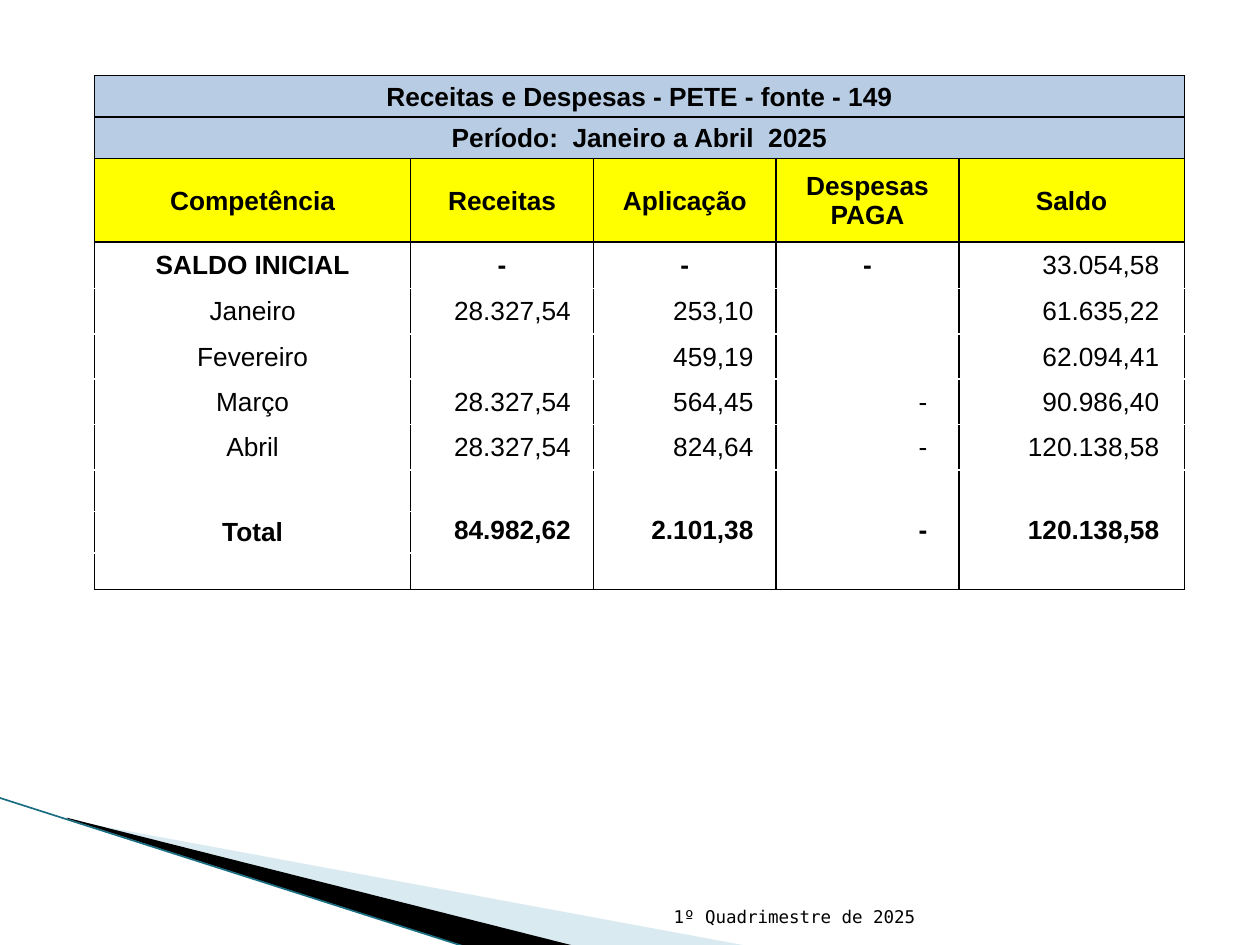
from lxml import etree
from pptx import Presentation
from pptx import util as u
from pptx.dml.color import RGBColor
from pptx.enum import shapes, text
from pptx.oxml import ns

BLACK = RGBColor(0x00, 0x00, 0x00)
WHITE = RGBColor(0xFF, 0xFF, 0xFF)
BLUE = RGBColor(0xB8, 0xCC, 0xE4)
YELLOW = RGBColor(0xFF, 0xFF, 0x00)
PALE_TEAL = RGBColor(0xA0, 0xCB, 0xDC)
TEAL = RGBColor(0x1B, 0x6E, 0x82)

CENTER, RIGHT = text.PP_ALIGN.CENTER, text.PP_ALIGN.RIGHT

ROWS = [
    ["Receitas e Despesas - PETE - fonte - 149", "", "", "", ""],
    ["Período:  Janeiro a Abril  2025", "", "", "", ""],
    ["Competência", "Receitas", "Aplicação", "Despesas PAGA", "Saldo"],
    ["SALDO INICIAL", "-", "-", "-", "33.054,58"],
    ["Janeiro", "28.327,54", "253,10", "", "61.635,22"],
    ["Fevereiro", "", "459,19", "", "62.094,41"],
    ["Março", "28.327,54", "564,45", "-", "90.986,40"],
    ["Abril", "28.327,54", "824,64", "-", "120.138,58"],
    ["", "84.982,62", "2.101,38", "-", "120.138,58"],
    ["Total", "", "", "", ""],
    ["", "", "", "", ""],
]
ROW_HEIGHTS = [0.33, 0.33, 0.66, 0.37, 0.36, 0.36, 0.36, 0.36, 0.33, 0.33, 0.29]
COLUMN_WIDTHS = [2.51, 1.45, 1.45, 1.45, 1.79]
NUMBER_MARGINS = [0.01, 0.18, 0.18, 0.25, 0.2]
HEADING, OPENING, TOTAL = 2, 3, 8
LAST = len(ROWS) - 1

WEDGES = [
    ([(0.55, 6.51), (5.95, 7.51), (4.56, 7.51), (0.55, 6.5)], PALE_TEAL, 40),
    ([(0.53, 6.49), (4.57, 7.51), (3.72, 7.52), (0.54, 6.5)], BLACK, 100),
]


def write(frame, content, size=15, font="Arial", bold=False, align=CENTER):
    paragraph = frame.paragraphs[0]
    paragraph.alignment = align
    if not content:
        end = etree.SubElement(paragraph._p, ns.qn("a:endParaRPr"))
        end.set("sz", str(size * 100))
        return
    run = paragraph.add_run()
    run.text = content
    run.font.size = u.Pt(size)
    run.font.name = font
    run.font.bold = bold
    run.font.color.rgb = BLACK


def draw_borders(cell, sides):
    properties = cell._tc.get_or_add_tcPr()
    for side in sides:
        line = etree.SubElement(properties, ns.qn(f"a:ln{side}"), w=str(u.Pt(1)))
        fill = etree.SubElement(line, ns.qn("a:solidFill"))
        etree.SubElement(fill, ns.qn("a:srgbClr"), val=str(BLACK))


def add_wedge(slide, points, color, opacity):
    corners = [(u.Inches(x), u.Inches(y)) for x, y in points]
    builder = slide.shapes.build_freeform(*corners[0], scale=1.0)
    builder.add_line_segments(corners[1:], close=True)
    shape = builder.convert_to_shape()
    shape.shadow.inherit = False
    shape.fill.solid()
    shape.fill.fore_color.rgb = color
    shape.line.fill.background()
    if opacity < 100:
        color_element = shape._element.spPr.find(".//" + ns.qn("a:srgbClr"))
        etree.SubElement(color_element, ns.qn("a:alpha"), val=str(opacity * 1000))


def add_edge(slide):
    edge = slide.shapes.add_connector(
        shapes.MSO_CONNECTOR.STRAIGHT,
        u.Inches(-0.01), u.Inches(6.33), u.Inches(3.71), u.Inches(7.52))
    edge.line.color.rgb = TEAL
    edge.line.width = u.Pt(0.95)
    etree.SubElement(edge._element.spPr, ns.qn("a:effectLst"))


def add_footer(slide):
    footer = slide.shapes.add_textbox(
        u.Inches(4.79), u.Inches(7.01), u.Inches(2.57), u.Inches(0.4))
    footer.text_frame.word_wrap = True
    footer.text_frame.vertical_anchor = text.MSO_ANCHOR.BOTTOM
    write(footer.text_frame, "1º Quadrimestre de 2025", size=10,
          font="DejaVu Sans Mono", align=RIGHT)


def format_cell(cell, row, column, content):
    is_number = column > 0 and row > HEADING and content[-1:].isdigit()
    is_dash = content == "-" and row > OPENING
    align = RIGHT if is_number or is_dash else CENTER
    cell.vertical_anchor = text.MSO_ANCHOR.MIDDLE
    cell.margin_left = cell.margin_top = u.Inches(0.01)
    cell.margin_bottom = 0
    cell.margin_right = u.Inches(NUMBER_MARGINS[column] if align == RIGHT else 0.01)
    bold = row <= HEADING or row >= TOTAL or (row == OPENING and not is_number)
    write(cell.text_frame, content, bold=bold, align=align)

    sides = "LR"
    if row <= OPENING:
        sides += "T"
    if row <= HEADING or row == LAST or (row == TOTAL and column > 0):
        sides += "B"
    draw_borders(cell, sides)
    cell.fill.solid()
    cell.fill.fore_color.rgb = (
        BLUE if row < HEADING else YELLOW if row == HEADING else WHITE)


def add_balance_table(slide):
    frame = slide.shapes.add_table(
        len(ROWS), len(COLUMN_WIDTHS), u.Inches(0.75), u.Inches(0.6),
        u.Inches(sum(COLUMN_WIDTHS)), u.Inches(sum(ROW_HEIGHTS)))
    table = frame.table
    table.first_row = table.horz_banding = False
    for column, width in zip(table.columns, COLUMN_WIDTHS):
        column.width = u.Inches(width)
    for row, height in zip(table.rows, ROW_HEIGHTS):
        row.height = u.Inches(height)
    for row, values in enumerate(ROWS):
        for column, content in enumerate(values):
            format_cell(table.cell(row, column), row, column, content)
    for row in range(HEADING):
        table.cell(row, 0).merge(table.cell(row, len(COLUMN_WIDTHS) - 1))
    for column in range(1, len(COLUMN_WIDTHS)):
        table.cell(TOTAL, column).merge(table.cell(LAST, column))


def main():
    presentation = Presentation()
    presentation.slide_width = u.Inches(10)
    presentation.slide_height = u.Inches(7.5)
    slide = presentation.slides.add_slide(presentation.slide_layouts[6])
    for points, color, opacity in WEDGES:
        add_wedge(slide, points, color, opacity)
    add_edge(slide)
    add_footer(slide)
    add_balance_table(slide)
    presentation.save("out.pptx")


if __name__ == "__main__":
    main()
